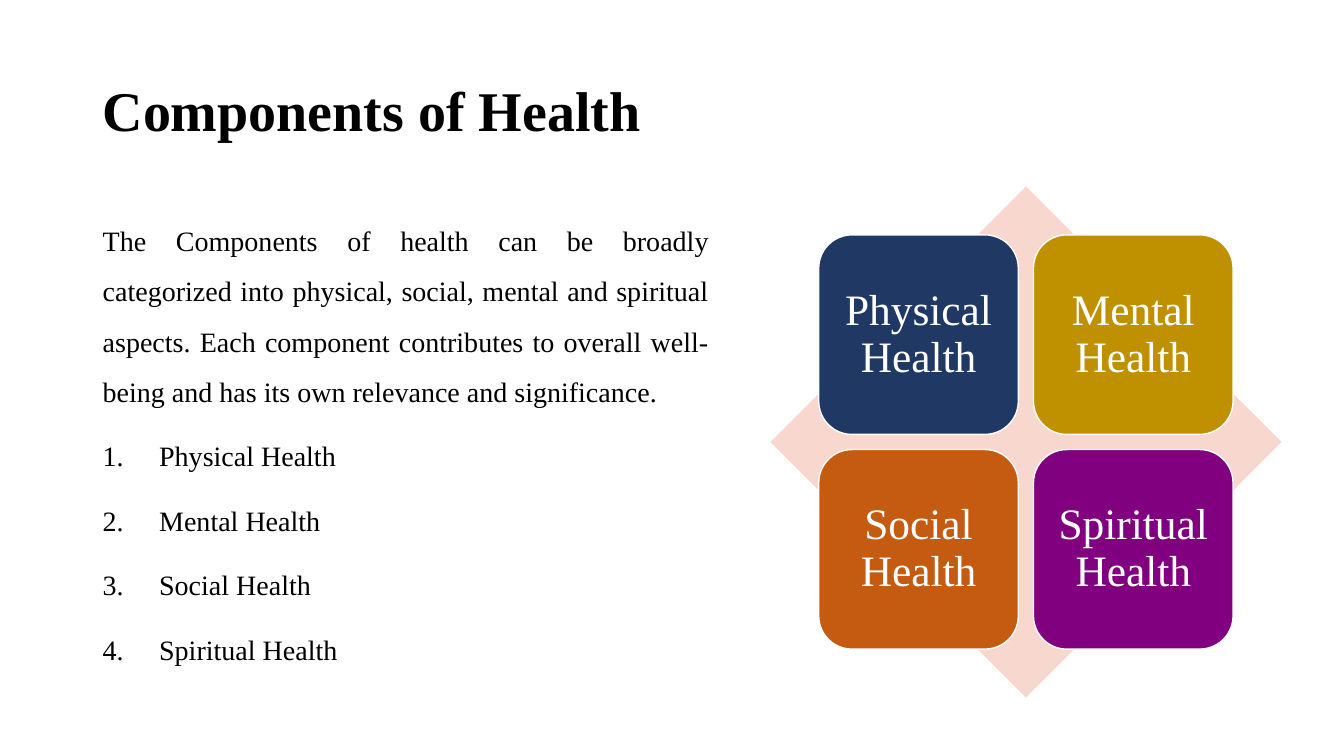
from lxml import etree
from pptx import Presentation
from pptx.dml.color import RGBColor
from pptx.enum.shapes import MSO_SHAPE
from pptx.enum.text import MSO_ANCHOR, PP_ALIGN
from pptx.oxml.ns import qn
from pptx.util import Inches, Pt

DIAMOND = MSO_SHAPE.DIAMOND
ROUNDED = MSO_SHAPE.ROUNDED_RECTANGLE
MIDDLE, TOP = MSO_ANCHOR.MIDDLE, MSO_ANCHOR.TOP
LEFT, CENTER, JUSTIFY = PP_ALIGN.LEFT, PP_ALIGN.CENTER, PP_ALIGN.JUSTIFY

FONT = "Times New Roman"
COLORS = {
    "text": "000000",
    "white": "FFFFFF",
    "diamond": "F8D7CE",
    "physical": "203864",
    "mental": "BF9000",
    "social": "C55A11",
    "spiritual": "800080",
}
INTRODUCTION = (
    "The Components of health can be broadly categorized into physical, "
    "social, mental and spiritual aspects. Each component contributes to "
    "overall well-being and has its own relevance and significance."
)
COMPONENTS = [
    ("Physical Health", "physical"),
    ("Mental Health", "mental"),
    ("Social Health", "social"),
    ("Spiritual Health", "spiritual"),
]


def color(name):
    return RGBColor.from_string(COLORS[name])


def write(paragraph, text, size, color_name="text", bold=False, align=LEFT,
          line_spacing=0.9, before=0, numbered=False):
    paragraph.alignment = align
    paragraph.line_spacing = line_spacing
    paragraph.space_before = Pt(before)
    run = paragraph.add_run()
    run.text = text
    run.font.name = FONT
    run.font.size = Pt(size)
    run.font.bold = bold
    run.font.color.rgb = color(color_name)
    if numbered:
        properties = paragraph._p.get_or_add_pPr()
        properties.set("marL", str(Inches(0.56)))
        properties.set("indent", str(-Inches(0.56)))
        etree.SubElement(properties, qn("a:buFont"), typeface="+mj-lt")
        etree.SubElement(properties, qn("a:buAutoNum"), type="arabicPeriod")


def add_text_frame(slide, left, top, width, height, anchor):
    box = slide.shapes.add_textbox(
        Inches(left), Inches(top), Inches(width), Inches(height))
    frame = box.text_frame
    frame.word_wrap = True
    frame.vertical_anchor = anchor
    return frame


def add_filled_shape(slide, kind, left, top, size, fill):
    shape = slide.shapes.add_shape(
        kind, Inches(left), Inches(top), Inches(size), Inches(size))
    shape.shadow.inherit = False
    shape.fill.solid()
    shape.fill.fore_color.rgb = color(fill)
    shape.line.fill.background()
    return shape


def add_title(slide, left, top, width, height):
    frame = add_text_frame(slide, left, top, width, height, MIDDLE)
    write(frame.paragraphs[0], "Components of Health", size=40, bold=True)


def add_body(slide, left, top, width, height):
    frame = add_text_frame(slide, left, top, width, height, TOP)
    body_format = dict(size=20, align=JUSTIFY, line_spacing=1.5, before=10)
    write(frame.paragraphs[0], INTRODUCTION, **body_format)
    for label, _ in COMPONENTS:
        write(frame.add_paragraph(), label, numbered=True, **body_format)


def add_matrix(slide, left, top, size):
    add_filled_shape(slide, DIAMOND, left, top, size, "diamond")
    tile, pitch = 1.98, 2.13
    margin = (size - tile - pitch) / 2
    for index, (label, fill) in enumerate(COMPONENTS):
        row, column = divmod(index, 2)
        shape = add_filled_shape(
            slide, ROUNDED, left + margin + column * pitch,
            top + margin + row * pitch, tile, fill)
        shape.line.color.rgb = color("white")
        shape.line.width = Pt(1)
        frame = shape.text_frame
        frame.word_wrap = True
        frame.vertical_anchor = MIDDLE
        frame.margin_left = frame.margin_right = Inches(0.13)
        frame.margin_top = frame.margin_bottom = Inches(0.13)
        write(frame.paragraphs[0], label, size=31, color_name="white",
              align=CENTER)


def main():
    presentation = Presentation()
    presentation.slide_width = Inches(13.33)
    presentation.slide_height = Inches(7.5)
    slide = presentation.slides.add_slide(presentation.slide_layouts[6])
    add_title(slide, 0.92, 0.4, 11.5, 1.45)
    add_matrix(slide, 7.64, 1.85, 5.07)
    add_body(slide, 0.92, 2, 6.21, 4.76)
    presentation.save("out.pptx")


if __name__ == "__main__":
    main()
